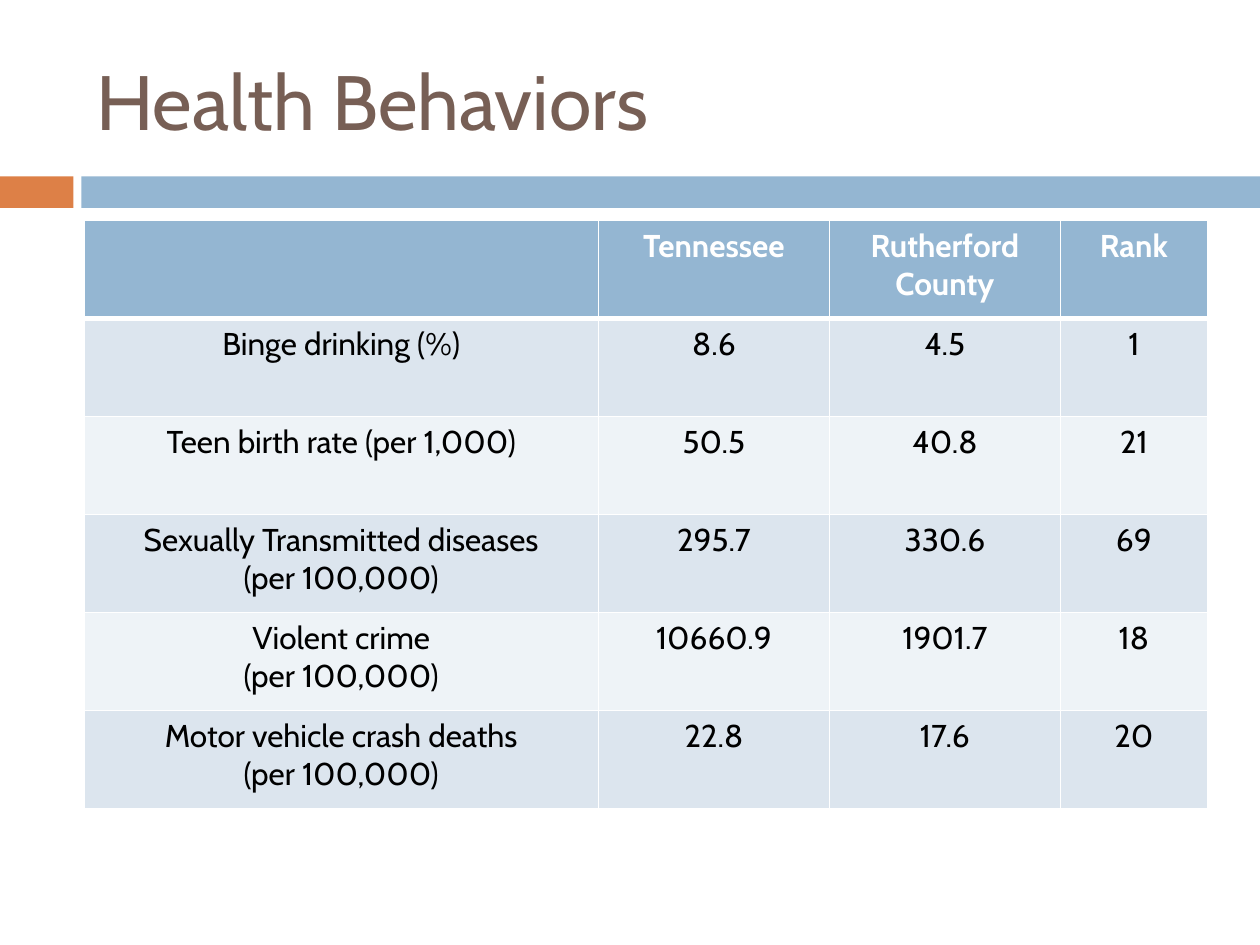
from pptx import Presentation
from pptx.dml.color import RGBColor
from pptx.enum.shapes import MSO_SHAPE as Shape
from pptx.enum.text import MSO_ANCHOR as Anchor, PP_ALIGN as Align
from pptx.oxml import parse_xml
from pptx.oxml.ns import nsdecls
from pptx.util import Pt


def paint(color_format, color):
    color_format.rgb = RGBColor.from_string(color)


def write(frame, text, size=18, color="000000", bold=False, align=Align.CENTER):
    frame.text = text
    for paragraph in frame.paragraphs:
        paragraph.alignment = align
        font = paragraph.font if not paragraph.runs else paragraph.runs[0].font
        font.name, font.size, font.bold = "Cabin", Pt(size), bold
        paint(font.color, color)


deck = Presentation()
deck.slide_width, deck.slide_height = Pt(720), Pt(540)
slide = deck.slides.add_slide(deck.slide_layouts[5])

for left, width, color in [(0, 42, "DD8047"), (46.5, 673.5, "94B6D2")]:
    band = slide.shapes.add_shape(Shape.RECTANGLE, Pt(left), Pt(100.8), Pt(width), Pt(18))
    band.shadow.inherit = False
    band.fill.solid()
    paint(band.fill.fore_color, color)
    band.line.fill.background()

title = slide.shapes.title
title.left, title.top, title.width, title.height = Pt(48), Pt(18), Pt(642), Pt(78)
title.text_frame.word_wrap = True
title.text_frame.vertical_anchor = Anchor.MIDDLE
write(title.text_frame, "Health Behaviors", size=44, color="775F55", align=Align.LEFT)

measures = [
    ("", "Tennessee", "Rutherford County", "Rank"),
    ("Binge drinking (%)", "8.6", "4.5", "1"),
    ("Teen birth rate (per 1,000)", "50.5", "40.8", "21"),
    ("Sexually Transmitted diseases\n(per 100,000)", "295.7", "330.6", "69"),
    ("Violent crime\n(per 100,000)", "10660.9", "1901.7", "18"),
    ("Motor vehicle crash deaths\n(per 100,000)", "22.8", "17.6", "20"),
]
column_widths = [294, 132, 132, 84]
row_height = 56
table = slide.shapes.add_table(
    len(measures), len(column_widths), Pt(48), Pt(126),
    Pt(sum(column_widths)), Pt(row_height * len(measures)),
).table
for column, width in zip(table.columns, column_widths):
    column.width = Pt(width)

for row, measure in enumerate(measures):
    table.rows[row].height = Pt(row_height)
    header = row == 0
    fill = "94B6D2" if header else ("EEF3F7", "DCE5EE")[row % 2]
    edges = {"lnL": 1, "lnR": 1, "lnT": 3 if row == 1 else 1, "lnB": 3 if header else 1}
    for column, text in enumerate(measure):
        cell = table.cell(row, column)
        write(cell.text_frame, text, color="FFFFFF" if header else "000000", bold=header)
        cell.fill.solid()
        paint(cell.fill.fore_color, fill)
        properties = cell._tc.get_or_add_tcPr()
        for position, (edge, weight) in enumerate(edges.items()):
            properties.insert(position, parse_xml(
                f'<a:{edge} {nsdecls("a")} w="{Pt(weight)}"><a:solidFill>'
                f'<a:srgbClr val="FFFFFF"/></a:solidFill></a:{edge}>'
            ))

deck.save("out.pptx")
